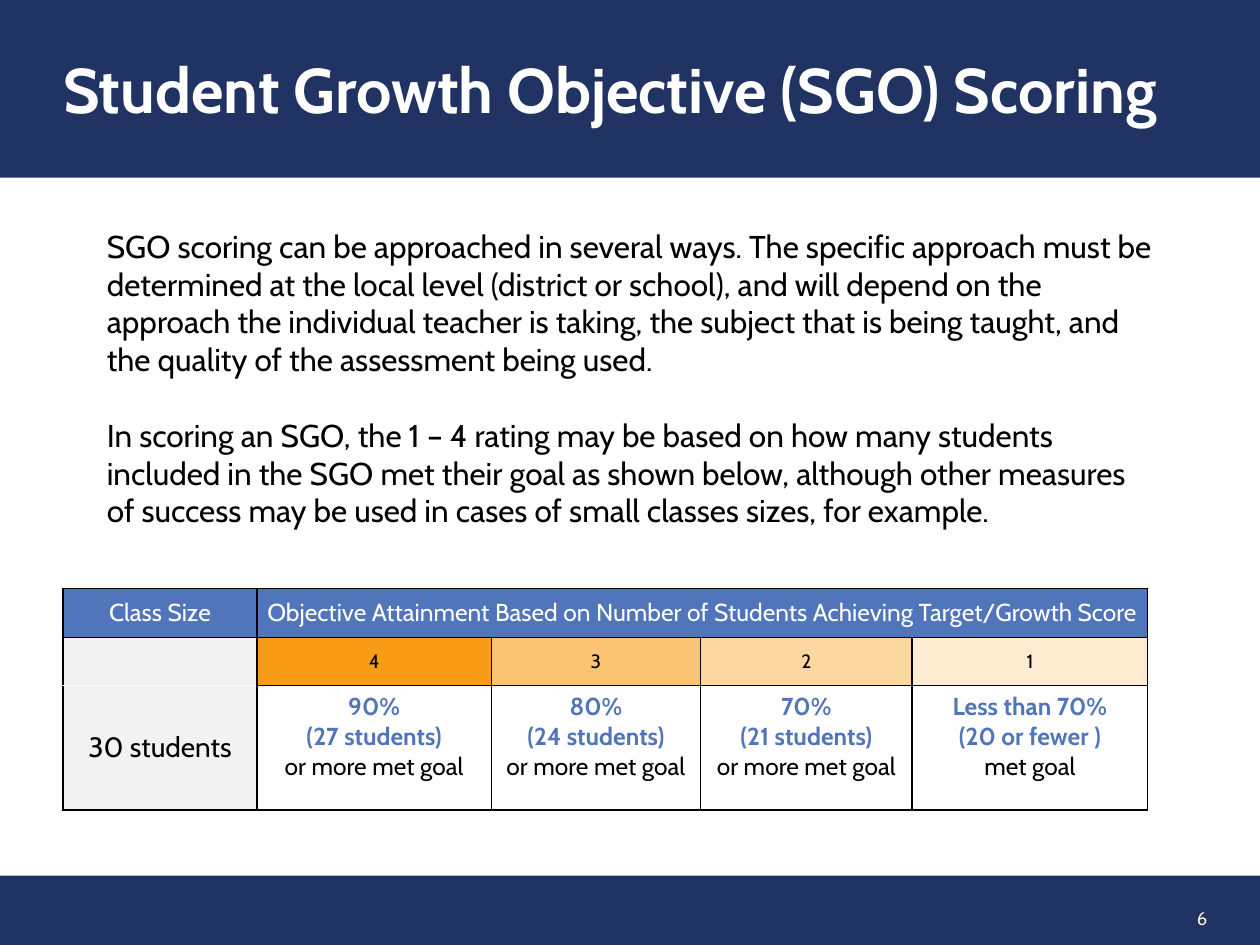
from lxml import etree
from pptx import Presentation
from pptx.dml.color import RGBColor
from pptx.enum.shapes import MSO_SHAPE
from pptx.enum.text import MSO_ANCHOR, MSO_AUTO_SIZE, PP_ALIGN
from pptx.oxml.ns import qn
from pptx.util import Inches, Pt

RECT = MSO_SHAPE.RECTANGLE
MIDDLE, TOP = MSO_ANCHOR.MIDDLE, MSO_ANCHOR.TOP
LEFT, CENTER, RIGHT = PP_ALIGN.LEFT, PP_ALIGN.CENTER, PP_ALIGN.RIGHT
FONT = "Cabin"
COLORS = {
    "navy": "213363", "blue": "5075BB", "white": "FFFFFF", "black": "000000",
    "gray": "F2F2F2", "cream": "FEEBD0",
}

TITLE = "Student Growth Objective (SGO) Scoring"
BODY = [
    "SGO scoring can be approached in several ways. The specific approach must be "
    "determined at the local level (district or school), and will depend on the "
    "approach the individual teacher is taking, the subject that is being taught, and "
    "the quality of the assessment being used.",
    "In scoring an SGO, the 1 – 4 rating may be based on how many students included in "
    "the SGO met their goal as shown below, although other measures of success may be "
    "used in cases of small classes sizes, for example.",
]
PAGE = "6"
HEADERS = ["Class Size",
           "Objective Attainment Based on Number of Students Achieving Target/Growth Score"]
CLASS_SIZE = "30 students"
RATINGS = [
    ("4", "F89C15", ["90%", "(27 students)", "or more met goal"]),
    ("3", "FBC473", ["80%", "(24 students)", "or more met goal"]),
    ("2", "FCD7A1", ["70%", "(21 students)", "or more met goal"]),
    ("1", "FEEBD0", ["Less than 70%", "(20 or fewer )", "met goal"]),
]
COL_WIDTHS = [1.54, 1.86, 1.66, 1.68, 1.87]
ROW_HEIGHTS = [0.39, 0.38, 0.99]


def rgb(color):
    return RGBColor.from_string(COLORS.get(color, color))


def write(tf, lines, size, color, align=LEFT, bold=False):
    tf.word_wrap = True
    tf.text = "\n".join(lines)
    for p in tf.paragraphs:
        p.alignment = align
        for r in p.runs:
            style(r, size, color, bold)


def style(r, size, color, bold):
    r.font.name, r.font.size, r.font.bold = FONT, Pt(size), bold
    r.font.color.rgb = rgb(color)


def fill(sp, color):
    sp.fill.solid()
    sp.fill.fore_color.rgb = rgb(color)


def set_borders(cell, sides):
    tc_pr = cell._tc.get_or_add_tcPr()
    for i, side in enumerate(sides):
        ln = etree.Element(qn(f"a:ln{side}"), w=str(Pt(1)))
        solid = etree.SubElement(ln, qn("a:solidFill"))
        etree.SubElement(solid, qn("a:srgbClr"), val=COLORS["black"])
        tc_pr.insert(i, ln)


def fill_cell(cell, lines, size, color, background, tight=True):
    write(cell.text_frame, lines, size, color, CENTER)
    cell.vertical_anchor = MIDDLE if tight else TOP
    if tight:
        cell.margin_left = cell.margin_right = Inches(0.07)
        cell.margin_top = cell.margin_bottom = 0
    fill(cell, background)


def add_title(slide):
    sp = slide.shapes.title
    sp.left, sp.top, sp.width, sp.height = 0, 0, Inches(10), Inches(1.41)
    fill(sp, "navy")
    tf = sp.text_frame
    write(tf, [TITLE], 36, "white", bold=True)
    tf.auto_size = MSO_AUTO_SIZE.NONE
    tf.vertical_anchor = MIDDLE
    tf.margin_left = Inches(0.5)


def add_footer(slide):
    sp = slide.shapes.add_shape(RECT, 0, Inches(6.95), Inches(10), Inches(0.55))
    sp.shadow.inherit = False
    fill(sp, "navy")
    sp.line.fill.background()
    box = slide.shapes.add_textbox(Inches(8.22), Inches(7.09), Inches(1.46), Inches(0.4))
    write(box.text_frame, [PAGE], 10.5, "cream", RIGHT)
    box.text_frame.vertical_anchor = MIDDLE


def add_body(slide):
    box = slide.shapes.add_textbox(Inches(0.75), Inches(1.75), Inches(8.5), Inches(2.52))
    write(box.text_frame, BODY, 18, "black")
    box.text_frame.paragraphs[1].space_before = Pt(21.6)


def add_scoring_table(slide):
    rows, cols = len(ROW_HEIGHTS), len(COL_WIDTHS)
    table = slide.shapes.add_table(
        rows, cols, Inches(0.5), Inches(4.67),
        Inches(sum(COL_WIDTHS)), Inches(sum(ROW_HEIGHTS))).table
    for col, width in zip(table.columns, COL_WIDTHS):
        col.width = Inches(width)
    for row, height in zip(table.rows, ROW_HEIGHTS):
        row.height = Inches(height)
    table.cell(0, 1).merge(table.cell(0, cols - 1))
    for c, text in enumerate(HEADERS):
        fill_cell(table.cell(0, c), [text], 14, "white", "blue")
    fill_cell(table.cell(1, 0), [], 11, "black", "gray")
    fill_cell(table.cell(2, 0), [CLASS_SIZE], 16, "black", "gray")
    for c, (rating, shade, lines) in enumerate(RATINGS, 1):
        fill_cell(table.cell(1, c), [rating], 11, "black", shade)
        goal = table.cell(2, c)
        fill_cell(goal, lines, 14, "black", "white", tight=False)
        for p in goal.text_frame.paragraphs[:2]:
            style(p.runs[0], 14, "blue", True)
    open_sides = {(1, 0): "LRT", (2, 0): "LRB"}
    for r in range(rows):
        for c in range(cols):
            set_borders(table.cell(r, c), open_sides.get((r, c), "LRTB"))


def main():
    """Build the SGO scoring slide and save it."""
    prs = Presentation()
    prs.slide_width, prs.slide_height = Inches(10), Inches(7.5)
    slide = prs.slides.add_slide(prs.slide_layouts[5])
    add_title(slide)
    add_footer(slide)
    add_body(slide)
    add_scoring_table(slide)
    prs.save("out.pptx")


if __name__ == "__main__":
    main()
